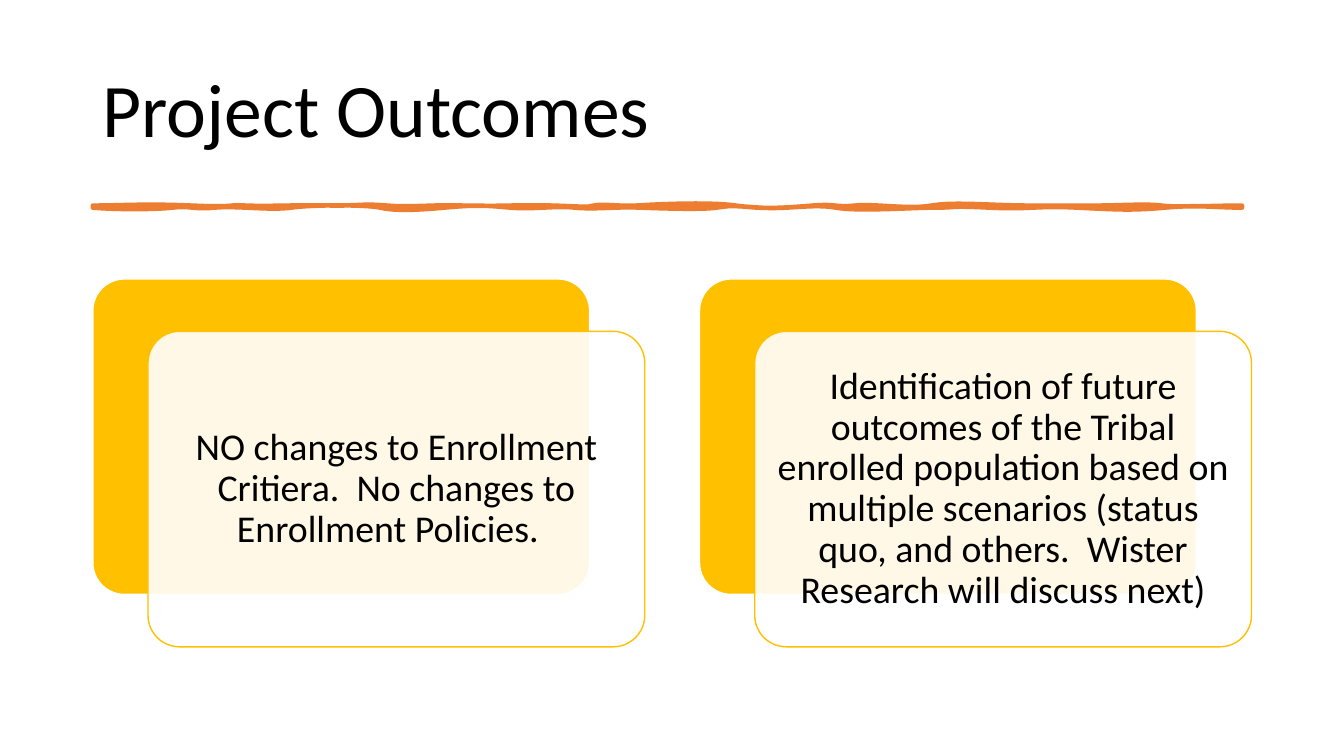
from lxml.etree import SubElement
from pptx import Presentation
from pptx.dml.color import RGBColor
from pptx.enum.shapes import MSO_SHAPE as SHAPE
from pptx.enum.text import MSO_ANCHOR as ANCHOR, PP_ALIGN as ALIGN
from pptx.oxml.ns import qn
from pptx.util import Cm, Pt

FONT = "Calibri"
BLACK, WHITE, GOLD, ORANGE = "000000", "FFFFFF", "FFC000", "ED7D31"

OUTCOMES = [
    "NO changes to Enrollment Critiera.  No changes to Enrollment Policies.  ",
    "Identification of future outcomes of the Tribal enrolled population based on "
    "multiple scenarios (status quo, and others.  Wister Research will discuss next)",
]

# Bezier segments of the brush stroke: control 1, control 2, end x.
# The stroke is STROKE_LENGTH long; y is measured from the edge itself.
STROKE_LENGTH, STROKE_DEPTH = 1140, 2
TOP_EDGE = [
    (27, 0, 52, -2, 98), (145, 2, 128, -1, 152), (175, 1, 211, -1, 239),
    (268, 0, 267, -2, 292), (318, 2, 331, -1, 368), (406, 1, 422, -1, 456),
    (489, 1, 489, 2, 497), (506, -2, 523, 1, 539), (555, -1, 609, -4, 638),
    (667, 4, 689, 2, 714), (739, -2, 735, 2, 756), (776, -2, 809, 4, 832),
    (855, -4, 890, 0, 931), (971, 0, 971, 0, 995), (1020, 0, 1044, -2, 1060),
    (1076, 2, 1111, 0, 1140),
]
BOTTOM_EDGE = [
    (1113, 0, 1097, -3, 1064), (1030, 3, 1018, 2, 976), (935, -2, 931, 2, 889),
    (847, -2, 860, 0, 836), (812, 0, 759, 4, 737), (714, -4, 690, 2, 661),
    (632, -2, 633, -2, 619), (606, 2, 569, 1, 543), (517, -1, 498, 2, 478),
    (459, -2, 436, 2, 414), (391, -2, 381, -3, 349), (317, 3, 298, 3, 285),
    (271, -3, 218, -3, 197), (176, 3, 143, -2, 121), (100, 2, 97, -2, 79),
    (62, 2, 22, 2, 0),
]


def rgb(color):
    return RGBColor.from_string(color)


def style(s, fill, line, width):
    s.shadow.inherit = False
    s.fill.solid()
    s.fill.fore_color.rgb = rgb(fill)
    s.line.color.rgb = rgb(line)
    s.line.width = Pt(width)


def write(tf, text, size, align):
    tf.word_wrap = True
    tf.vertical_anchor = ANCHOR.MIDDLE
    p = tf.paragraphs[0]
    p.alignment = align
    p.line_spacing = 0.9
    r = p.add_run()
    r.text = text
    r.font.name = FONT
    r.font.size = Pt(size)
    r.font.color.rgb = rgb(BLACK)


def add_title(slide, x, y, w, h):
    box = slide.shapes.add_textbox(x, y, w, h)
    write(box.text_frame, "Project Outcomes", 54, ALIGN.LEFT)


def bend(line, controls):
    """Turn a straight path segment into a cubic Bezier curve."""
    line.tag = qn("a:cubicBezTo")
    for i, (x, y) in enumerate(controls):
        pt = SubElement(line, qn("a:pt"), x=str(x), y=str(y))
        line.insert(i, pt)


def add_brush_stroke(slide, x, y, w):
    curves = [((x1, base + y1), (x2, base + y2), (end_x, base))
              for edge, base in [(TOP_EDGE, 0), (BOTTOM_EDGE, STROKE_DEPTH)]
              for x1, y1, x2, y2, end_x in edge]
    ends = [end for _, _, end in curves]
    tip = len(TOP_EDGE)
    ends.insert(tip, (STROKE_LENGTH, STROKE_DEPTH))
    builder = slide.shapes.build_freeform(0, 0, scale=w / STROKE_LENGTH)
    builder.add_line_segments(ends)
    s = builder.convert_to_shape(x, y)
    style(s, ORANGE, ORANGE, 3.25)
    lines = list(s.element.iter(qn("a:lnTo")))
    for line, curve in zip(lines[:tip] + lines[tip + 1:], curves):
        bend(line, curve[:2])


def add_outcome(slide, x, y, w, h, text):
    """Add a gold panel with a translucent text card shifted over it."""
    shift_x, shift_y = Cm(1.39), Cm(1.32)
    card_w, card_h = w - shift_x, h - shift_y
    panels = []
    for left, top, fill, line in [(x, y, GOLD, WHITE),
                                  (x + shift_x, y + shift_y, WHITE, GOLD)]:
        s = slide.shapes.add_shape(SHAPE.ROUNDED_RECTANGLE, left, top, card_w, card_h)
        s.adjustments[0] = 0.1
        style(s, fill, line, 1)
        panels.append(s)
    card = panels[1]
    color = card.element.spPr.find(qn("a:solidFill"))[0]
    SubElement(color, qn("a:alpha"), val="90000")
    tf = card.text_frame
    tf.margin_left = tf.margin_right = tf.margin_top = tf.margin_bottom = Cm(0.28)
    write(tf, text, 27, ALIGN.CENTER)


def main():
    prs = Presentation()
    prs.slide_width, prs.slide_height = Cm(33.87), Cm(19.05)
    slide = prs.slides.add_slide(prs.slide_layouts[6])
    left = Cm(2.34)
    add_title(slide, left, Cm(1.02), Cm(29.21), Cm(3.68))
    add_brush_stroke(slide, left, Cm(5.18), Cm(28.96))
    for i, text in enumerate(OUTCOMES):
        add_outcome(slide, left + i * Cm(15.29), Cm(7.03), Cm(13.91), Cm(9.27), text)
    prs.save("out.pptx")


if __name__ == "__main__":
    main()
